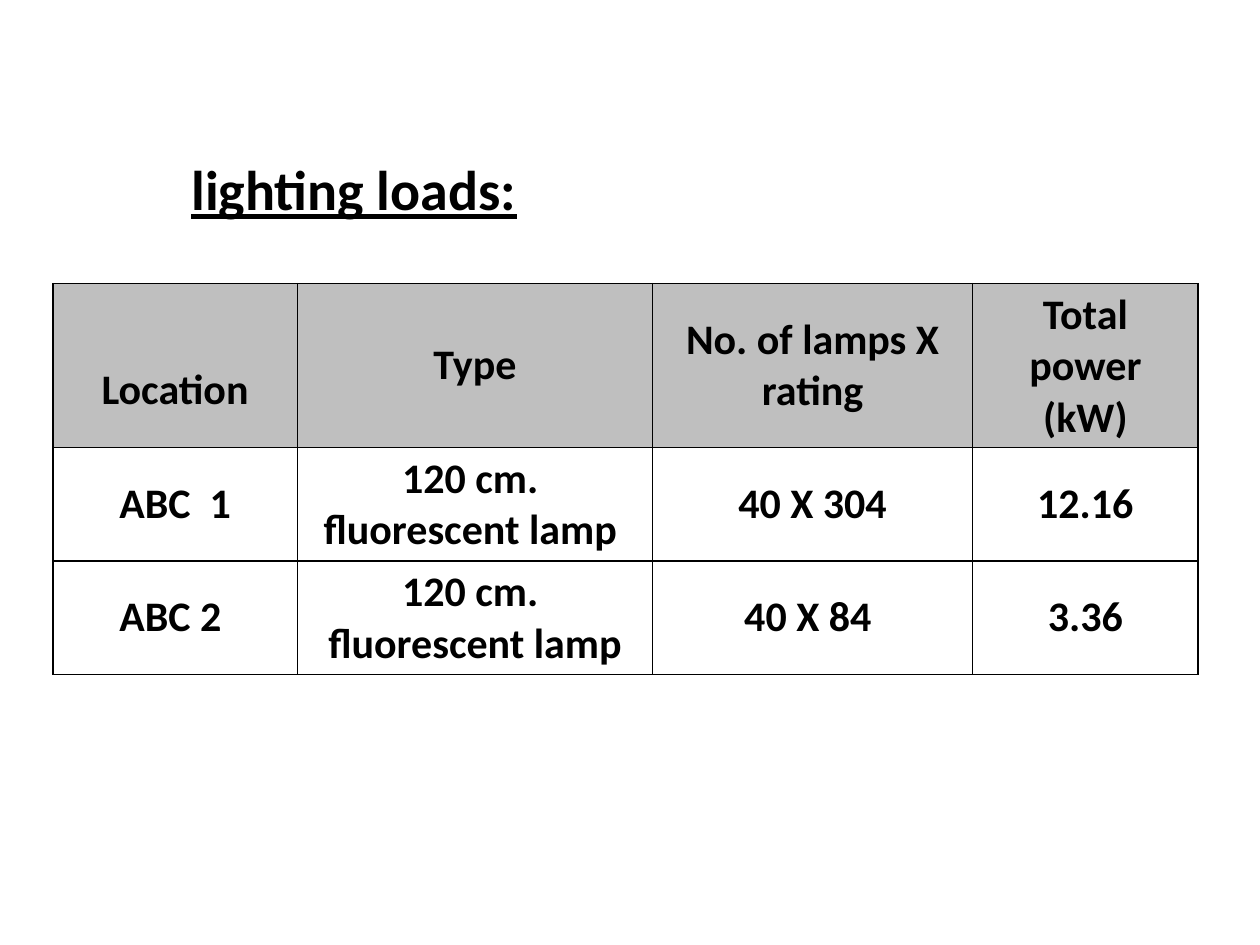
from pptx import Presentation
from pptx.dml.color import RGBColor
from pptx.enum.text import MSO_ANCHOR, PP_ALIGN
from pptx.oxml import parse_xml
from pptx.oxml.ns import nsdecls
from pptx.util import Inches, Pt

MIDDLE, CENTER = MSO_ANCHOR.MIDDLE, PP_ALIGN.CENTER
THEME = {
    "font": "Calibri", "ink": "000000", "header": "BFBFBF",
    "title_size": 32, "table_size": 24, "border": 1,
}

COLUMN_WIDTHS = [1.94, 2.82, 2.54, 1.79]
ROW_HEIGHTS = [1.3, 0.9, 0.9]
LOADS = [
    ["Location", "Type", "No. of lamps X rating", "Total power (kW)"],
    ["ABC  1", "120 cm.  fluorescent lamp ", "40 X 304", "12.16"],
    ["ABC 2 ", "120 cm.  fluorescent lamp", "40 X 84 ", "3.36"],
]


def add_run(paragraph, text, size):
    run = paragraph.add_run()
    run.text = text
    run.font.name = THEME["font"]
    run.font.size = Pt(size)
    run.font.bold = True
    run.font.color.rgb = RGBColor.from_string(THEME["ink"])
    return run


def add_borders(cell):
    properties = cell._tc.get_or_add_tcPr()
    for position, side in enumerate(("lnL", "lnR", "lnT", "lnB")):
        properties.insert(position, parse_xml(
            f'<a:{side} {nsdecls("a")} w="{Pt(THEME["border"])}"><a:solidFill>'
            f'<a:srgbClr val="{THEME["ink"]}"/></a:solidFill></a:{side}>'))


presentation = Presentation()
presentation.slide_width, presentation.slide_height = Inches(10), Inches(7.5)
slide = presentation.slides.add_slide(presentation.slide_layouts[6])

# Heading
heading = slide.shapes.add_textbox(
    Inches(1.42), Inches(1.18), Inches(3.23), Inches(0.63)).text_frame
heading.word_wrap = False
heading.vertical_anchor = MIDDLE
add_run(heading.paragraphs[0], "lighting loads:", THEME["title_size"]).font.underline = True

# Table grid
loads_table = slide.shapes.add_table(
    len(ROW_HEIGHTS), len(COLUMN_WIDTHS), Inches(0.42), Inches(2.25),
    Inches(sum(COLUMN_WIDTHS)), Inches(sum(ROW_HEIGHTS))).table
loads_table.horz_banding = False
for column, width in zip(loads_table.columns, COLUMN_WIDTHS):
    column.width = Inches(width)
for row, height in zip(loads_table.rows, ROW_HEIGHTS):
    row.height = Inches(height)

# Table contents
for row_index, load in enumerate(LOADS):
    for column_index, text in enumerate(load):
        cell = loads_table.cell(row_index, column_index)
        cell.vertical_anchor = MIDDLE
        if row_index == 0:
            cell.fill.solid()
            cell.fill.fore_color.rgb = RGBColor.from_string(THEME["header"])
        else:
            cell.fill.background()
        add_borders(cell)
        paragraph = cell.text_frame.paragraphs[0]
        paragraph.alignment = CENTER
        add_run(paragraph, text, THEME["table_size"])

# The first heading sits half a line below the others
loads_table.cell(0, 0).margin_top = Inches(0.45)

presentation.save("out.pptx")
